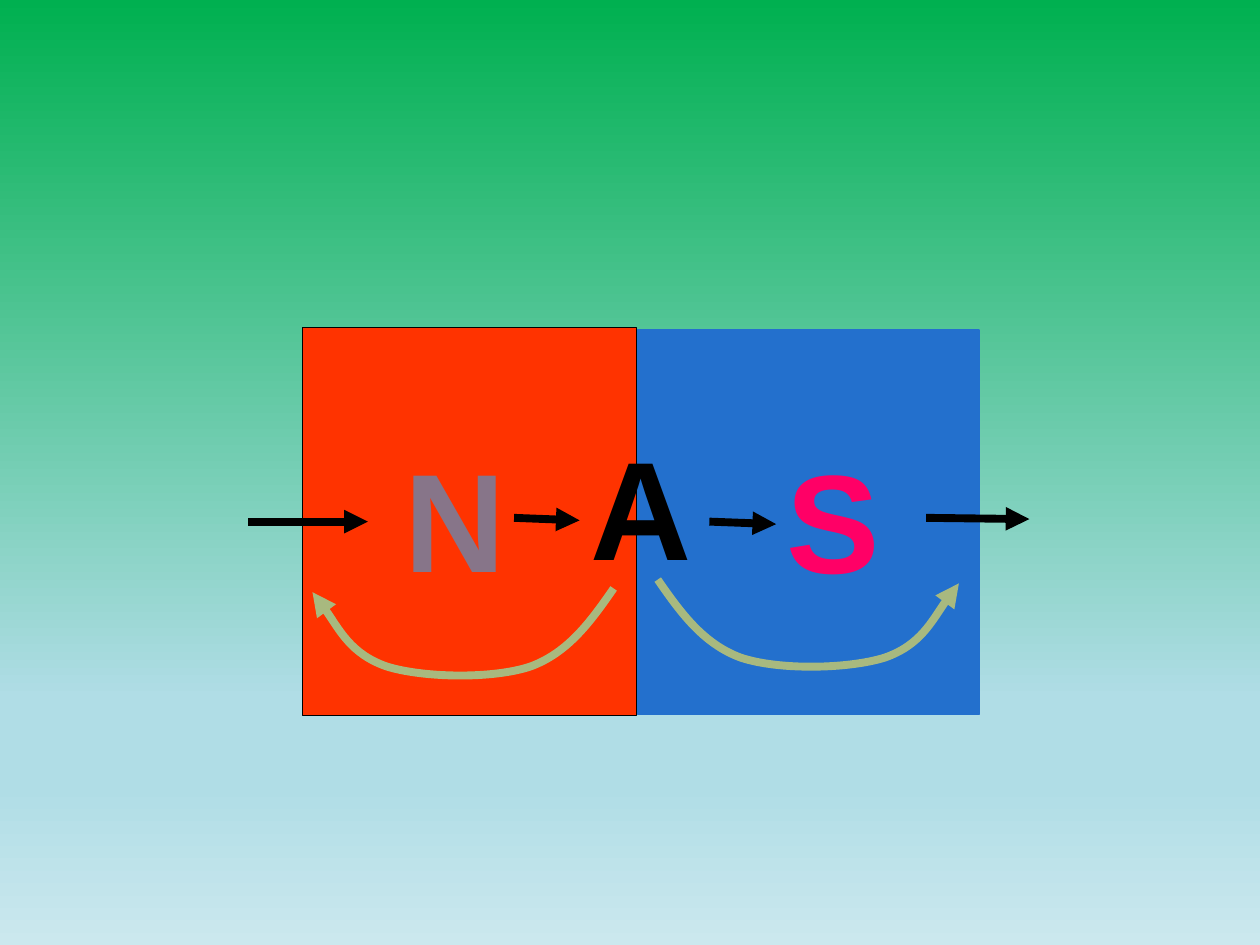
import copy
from dataclasses import dataclass

import lxml.etree
import pptx
import pptx.dml.color
import pptx.enum.shapes
import pptx.enum.text
import pptx.oxml.ns
import pptx.util

Inches = pptx.util.Inches
qn = pptx.oxml.ns.qn


@dataclass(frozen=True)
class Theme:
    font: str = "Arial"
    size: int = 80
    black: str = "000000"
    red: str = "FF3300"
    blue: str = "2370CD"
    mauve: str = "877589"
    pink: str = "FF0066"
    olive: str = "A8B97F"
    thin: float = 0.75
    thick: float = 4.5
    sky: tuple = ((0, "00B050"), (0.74, "B0DDE6"), (0.83, "B0DDE6"), (1, "CBE8EE"))


THEME = Theme()


def color(code):
    return pptx.dml.color.RGBColor.from_string(code)


def set_line(shape, code, width):
    shape.line.color.rgb = color(code)
    shape.line.width = pptx.util.Pt(width)


def add_head(shape):
    """End the line of a shape in a triangle."""
    line = shape.line._get_or_add_ln()
    lxml.etree.SubElement(line, qn("a:tailEnd"), type="triangle")


def paint_sky(slide):
    fill = slide.background.fill
    fill.gradient()
    fill.gradient_angle = 270
    stops = slide.element.xpath(".//a:gsLst")[0]
    while len(stops) < len(THEME.sky):
        stops.append(copy.deepcopy(stops[0]))
    for stop, (place, code) in zip(fill.gradient_stops, THEME.sky):
        stop.position = place
        stop.color.rgb = color(code)


def add_block(slide, box, fill, edge):
    kind = pptx.enum.shapes.MSO_SHAPE.RECTANGLE
    block = slide.shapes.add_shape(kind, *map(Inches, box))
    block.shadow.inherit = False
    block.fill.solid()
    block.fill.fore_color.rgb = color(fill)
    set_line(block, edge, THEME.thin)


def add_letter(slide, text, left, top, code):
    box = slide.shapes.add_textbox(*map(Inches, (left, top, 1.22, 1.43)))
    frame = box.text_frame
    frame.word_wrap = True
    frame.auto_size = pptx.enum.text.MSO_AUTO_SIZE.SHAPE_TO_FIT_TEXT
    para = frame.paragraphs[0]
    para.text = text
    para.space_before = pptx.util.Pt(7)
    font = para.font
    font.name = THEME.font
    font.size = pptx.util.Pt(THEME.size)
    font.bold = True
    font.color.rgb = color(code)


def add_arrow(slide, start, end):
    kind = pptx.enum.shapes.MSO_CONNECTOR.STRAIGHT
    arrow = slide.shapes.add_connector(kind, *map(Inches, start + end))
    set_line(arrow, THEME.black, THEME.thick)
    add_head(arrow)
    lxml.etree.SubElement(arrow._element.spPr, qn("a:effectLst"))


def add_curve(slide, points):
    """Draw a start point and triples of Bezier points as one open curve."""
    spots = [(Inches(x), Inches(y)) for x, y in points]
    maker = slide.shapes.build_freeform(*spots[0])
    maker.add_line_segments(spots[1:], close=False)
    curve = maker.convert_to_shape()
    curve.shadow.inherit = False
    curve.fill.background()
    set_line(curve, THEME.olive, THEME.thick)
    add_head(curve)
    # Turn each three straight steps into one cubic step
    steps = curve._element.xpath(".//a:lnTo")
    trace = steps[0].getparent()
    for i in range(0, len(steps), 3):
        cubic = lxml.etree.SubElement(trace, qn("a:cubicBezTo"))
        for step in steps[i:i + 3]:
            cubic.append(step[0])
            trace.remove(step)


def main():
    deck = pptx.Presentation()
    deck.slide_width, deck.slide_height = Inches(10), Inches(7.5)
    slide = deck.slides.add_slide(deck.slide_layouts[6])
    paint_sky(slide)

    # Two halves of the magnet
    add_block(slide, (2.4, 2.6, 2.65, 3.08), THEME.red, THEME.black)
    add_block(slide, (5.06, 2.62, 2.71, 3.05), THEME.blue, THEME.blue)

    # Letters
    add_letter(slide, "N", 3.11, 3.38, THEME.mauve)
    add_letter(slide, "A", 4.59, 3.29, THEME.black)
    add_letter(slide, "S", 6.14, 3.39, THEME.pink)

    # Arrows through the magnet
    for start, end in (
        ((4.08, 4.11), (4.6, 4.13)),
        ((5.63, 4.14), (6.16, 4.16)),
        ((1.97, 4.14), (2.92, 4.14)),
        ((7.35, 4.11), (8.17, 4.12)),
    ):
        add_arrow(slide, start, end)

    # Curved arrows: the right one mirrors the left, slightly higher
    left = [
        (4.87, 4.67),
        (4.69, 4.93), (4.51, 5.18), (4.21, 5.29),
        (3.91, 5.39), (3.36, 5.38), (3.07, 5.29),
        (2.78, 5.19), (2.57, 4.8), (2.48, 4.7),
    ]
    add_curve(slide, left)
    add_curve(slide, [(10.09 - x, y - 0.07) for x, y in left])

    deck.save("out.pptx")


if __name__ == "__main__":
    main()
